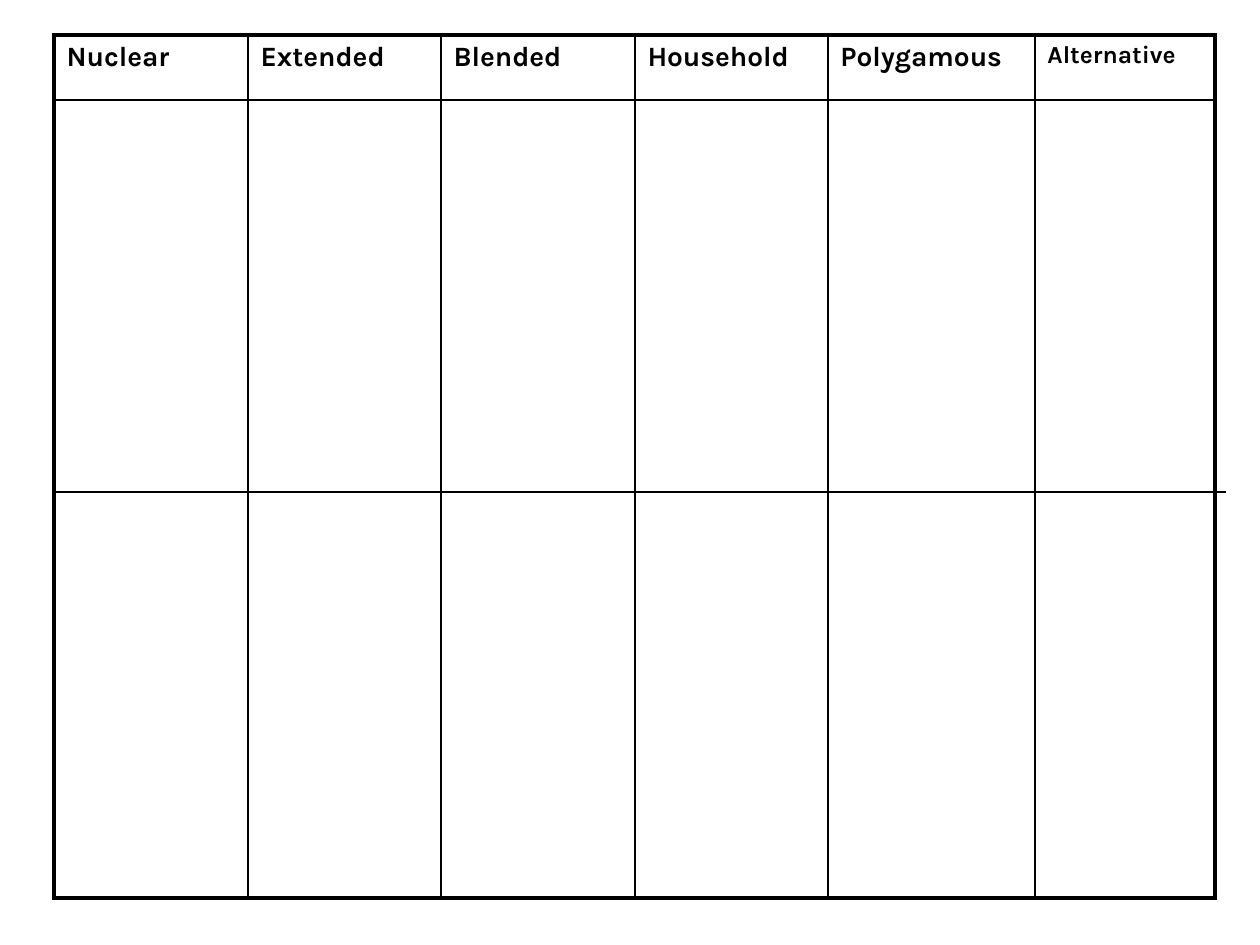
from dataclasses import dataclass

from lxml.etree import SubElement
from pptx import Presentation
from pptx.dml.color import RGBColor
from pptx.enum.shapes import MSO_CONNECTOR
from pptx.oxml import parse_xml
from pptx.oxml.ns import nsdecls, qn
from pptx.util import Pt

FAMILY_TYPES = ["Nuclear", "Extended", "Blended", "Household", "Polygamous", "Alternative"]
COLUMN_WIDTHS = [194, 193, 194, 193, 207, 180]
ROW_HEIGHTS = [65, 798]
TABLE_LEFT, TABLE_TOP = 54, 35
DIVIDER_Y, DIVIDER_RIGHT = 492, 1226


@dataclass(frozen=True)
class Theme:
    font: str = "Karla"
    ink: str = "000000"
    paper: str = "FFFFFF"
    heading: int = 16
    small_heading: int = 14
    outer_line: float = 2.25
    inner_line: float = 1
    divider_line: float = 0.75


THEME = Theme()


def px(length):
    return length * 914400 // 126


def set_borders(cell, row, column):
    """Heavy lines on the table's outside edges, thin ones inside."""
    outer_edges = {
        "lnL": column == 0,
        "lnR": column == len(COLUMN_WIDTHS) - 1,
        "lnT": row == 0,
        "lnB": row == len(ROW_HEIGHTS) - 1,
    }
    properties = cell._tc.get_or_add_tcPr()
    for position, (tag, is_outer) in enumerate(outer_edges.items()):
        width = Pt(THEME.outer_line if is_outer else THEME.inner_line)
        properties.insert(position, parse_xml(
            f'<a:{tag} {nsdecls("a")} w="{width}"><a:solidFill>'
            f'<a:srgbClr val="{THEME.ink}"/></a:solidFill></a:{tag}>'))


def add_family_table(slide):
    table = slide.shapes.add_table(
        len(ROW_HEIGHTS), len(COLUMN_WIDTHS), px(TABLE_LEFT), px(TABLE_TOP),
        px(sum(COLUMN_WIDTHS)), px(sum(ROW_HEIGHTS))).table
    table.horz_banding = False
    for column, width in zip(table.columns, COLUMN_WIDTHS):
        column.width = px(width)
    for row, height in zip(table.rows, ROW_HEIGHTS):
        row.height = px(height)

    for index, cell in enumerate(table.iter_cells()):
        cell.fill.solid()
        cell.fill.fore_color.rgb = RGBColor.from_string(THEME.paper)
        set_borders(cell, *divmod(index, len(COLUMN_WIDTHS)))

    for column, name in enumerate(FAMILY_TYPES):
        para = table.cell(0, column).text_frame.paragraphs[0]
        para.text = name
        font = para.runs[0].font
        font.name = THEME.font
        font.bold = True
        font.size = Pt(THEME.small_heading if name == "Alternative" else THEME.heading)
        font.color.rgb = RGBColor.from_string(THEME.ink)


def add_divider(slide):
    divider = slide.shapes.add_connector(
        MSO_CONNECTOR.STRAIGHT, px(TABLE_LEFT), px(DIVIDER_Y),
        px(DIVIDER_RIGHT), px(DIVIDER_Y))
    divider.line.color.rgb = RGBColor.from_string(THEME.ink)
    divider.line.width = Pt(THEME.divider_line)
    SubElement(divider._element.spPr, qn("a:effectLst"))


def main():
    deck = Presentation()
    deck.slide_width, deck.slide_height = px(1260), px(945)
    slide = deck.slides.add_slide(deck.slide_layouts[6])
    add_family_table(slide)
    add_divider(slide)
    deck.save("out.pptx")


if __name__ == "__main__":
    main()
